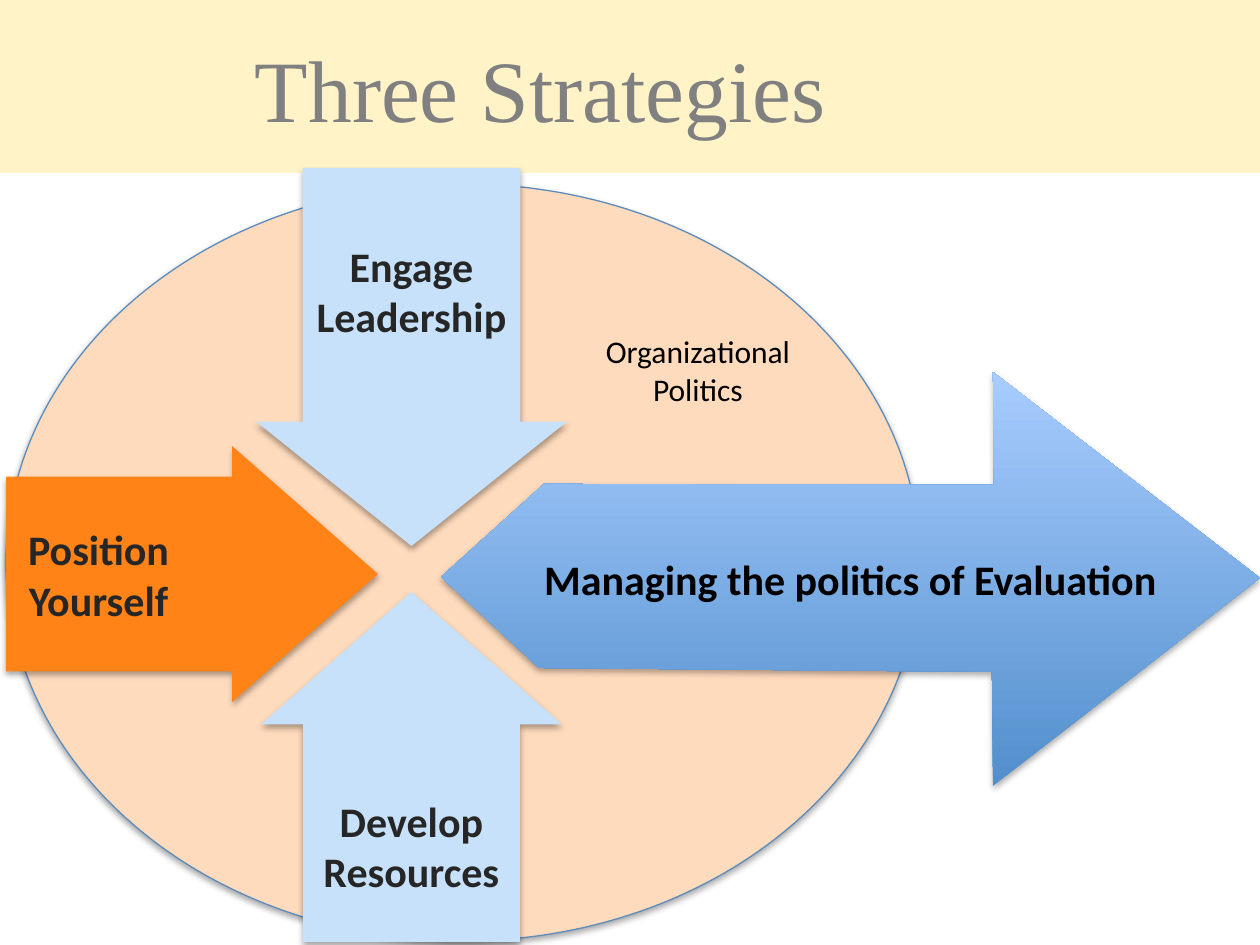
import pptx
import pptx.util
import pptx.oxml
import pptx.oxml.ns
from pptx.dml.color import RGBColor
from pptx.enum.shapes import MSO_SHAPE
from pptx.enum.text import MSO_ANCHOR, PP_ALIGN

SCALE = 914400 / 126  # EMU per px
INSET = (13, 6, 13, 6)  # left, top, right, bottom
COLORS = {
    "band": "FFF3C7", "title": "808080", "oval": "FFDBBD", "oval_line": "5C8CBC",
    "orange": "FF8317", "sky": "C6E1F9", "deep": "528FCC", "light": "A8CCFF",
    "dark": "262626", "black": "000000",
}


def px(n):
    return pptx.util.Emu(round(n * SCALE))


def rgb(name):
    return RGBColor.from_string(COLORS[name])


def put_text(sp, text, size=24, color="dark", font="Calibri", bold=False,
             align=PP_ALIGN.CENTER, anchor=MSO_ANCHOR.MIDDLE, inset=INSET):
    tf = sp.text_frame
    tf.word_wrap = True
    tf.vertical_anchor = anchor
    tf.margin_left, tf.margin_top, tf.margin_right, tf.margin_bottom = map(px, inset)
    p = tf.paragraphs[0]
    p.alignment = align
    r = p.add_run()
    r.text = text
    r.font.size = pptx.util.Pt(size)
    r.font.name = font
    r.font.bold = bold
    r.font.color.rgb = rgb(color)


class Slide:
    def __init__(self, prs):
        self.s = prs.slides.add_slide(prs.slide_layouts[6])

    def shadow(self, sp, alpha=32, blur=3.5, dist=2.2):
        sp.shadow.inherit = False
        effects = sp._element.spPr.find(pptx.oxml.ns.qn("a:effectLst"))
        effects.append(pptx.oxml.parse_xml(
            f'<a:outerShdw {pptx.oxml.ns.nsdecls("a")} blurRad="{round(blur * 12700)}" '
            f'dist="{round(dist * 12700)}" dir="5400000" rotWithShape="0">'
            f'<a:srgbClr val="{COLORS["black"]}"><a:alpha val="{alpha * 1000}"/>'
            '</a:srgbClr></a:outerShdw>'))

    def shape(self, kind, box, fill, line=None, adj=()):
        sp = self.s.shapes.add_shape(kind, *map(px, box))
        sp.shadow.inherit = False
        sp.fill.solid()
        sp.fill.fore_color.rgb = rgb(fill)
        if line:
            sp.line.color.rgb = rgb(line)
            sp.line.width = pptx.util.Pt(0.75)
        else:
            sp.line.fill.background()
        for i, value in enumerate(adj):
            sp.adjustments[i] = value
        return sp

    def arrow(self, kind, box, fill, adj, text, inset):
        sp = self.shape(kind, box, fill, adj=adj)
        self.shadow(sp)
        put_text(sp, text, bold=True, inset=inset)

    def outline(self, points, bottom, top, text):
        fb = self.s.shapes.build_freeform(*points[0], scale=SCALE)
        fb.add_line_segments(points[1:], close=True)
        sp = fb.convert_to_shape()
        sp.fill.gradient()
        sp.fill.gradient_angle = 90
        for stop, color, pos in zip(sp.fill.gradient_stops, (bottom, top), (0, 1)):
            stop.color.rgb = rgb(color)
            stop.position = pos
        sp.line.fill.background()
        self.shadow(sp)
        put_text(sp, text, color="black", bold=True)

    def text(self, box, text, **fmt):
        put_text(self.s.shapes.add_textbox(*map(px, box)), text, **fmt)


def main():
    prs = pptx.Presentation()
    prs.slide_width, prs.slide_height = px(1260), px(945)
    s = Slide(prs)

    # Title band
    s.shape(MSO_SHAPE.RECTANGLE, (0, -3, 1260, 176), "band")
    s.text((242, 21, 1134, 112), "Three Strategies", size=50, color="title",
           font="Times New Roman", align=PP_ALIGN.LEFT, anchor=MSO_ANCHOR.TOP,
           inset=(13, 14, 13, 0))

    # Organization
    oval = s.shape(MSO_SHAPE.OVAL, (6, 184, 914, 757), "oval", line="oval_line")
    s.shadow(oval, alpha=35, blur=3.1, dist=1.8)

    # Strategies and their outcome
    s.arrow(MSO_SHAPE.RIGHT_ARROW, (6, 446, 372, 256), "orange", (0.76, 0.57),
            "Position Yourself", (13, 6, 89, 6))
    s.outline([(544, 484), (994, 485), (993, 372), (1260, 578), (993, 786),
               (992, 672), (539, 668), (441, 577)], "deep", "light",
              "Managing the politics of Evaluation")
    s.arrow(MSO_SHAPE.DOWN_ARROW, (256, 168, 311, 378), "sky", (0.7, 0.4),
            "Engage Leadership", (13, 6, 13, 51))
    s.text((577, 326, 242, 89), "Organizational Politics", size=18, color="black",
           anchor=MSO_ANCHOR.TOP)
    s.arrow(MSO_SHAPE.UP_ARROW, (261, 592, 301, 350), "sky", (0.72, 0.44),
            "Develop Resources", (13, 68, 13, 6))

    prs.save("out.pptx")


if __name__ == "__main__":
    main()
